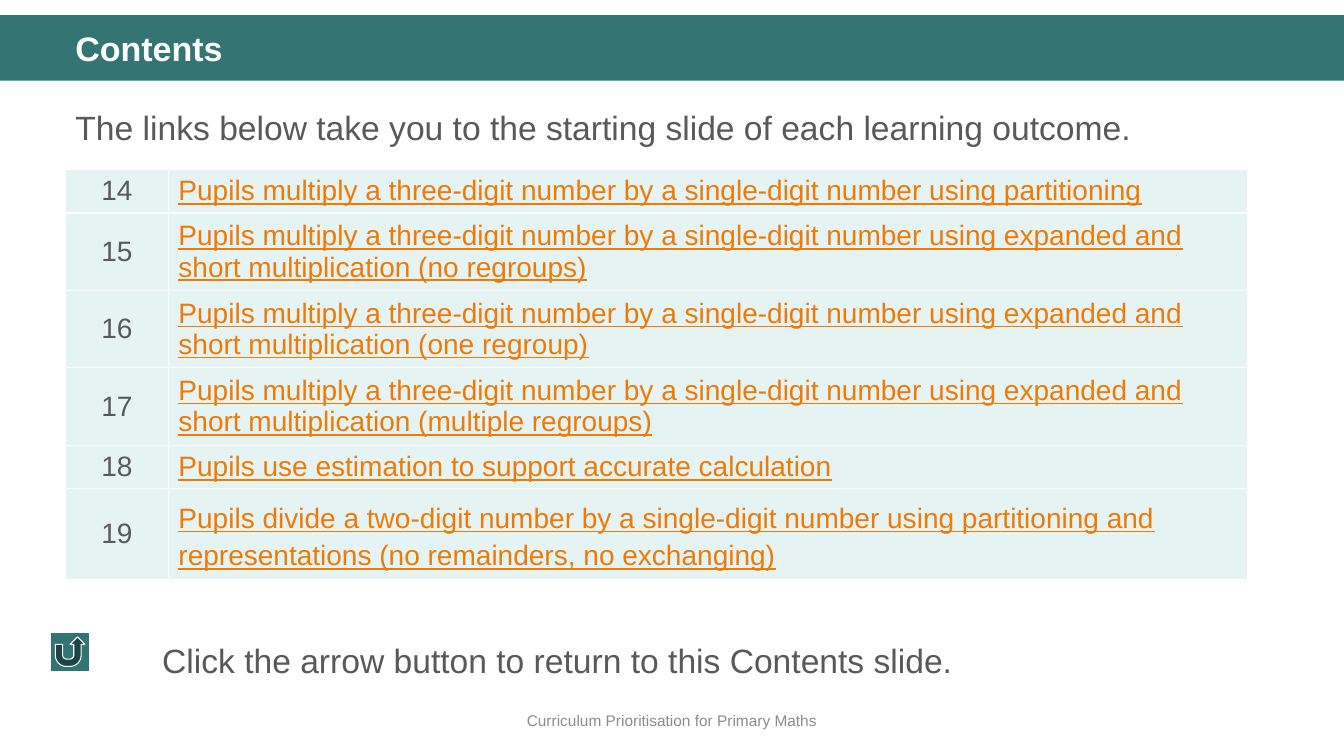
"""Build the contents slide of a primary maths curriculum deck."""
import pptx
import pptx.dml.color
import pptx.enum.shapes
import pptx.enum.text
import pptx.util

ALIGN = pptx.enum.text.PP_ALIGN
ANCHOR = pptx.enum.text.MSO_ANCHOR
SHAPE = pptx.enum.shapes.MSO_SHAPE
TEAL, BUTTON_TEAL, PALE_TEAL = "347574", "327473", "E5F3F2"
WHITE, GREY, LIGHT_GREY, ORANGE = "FFFFFF", "595959", "8C8C8C", "EE7B08"


def colour(hex_value):
    return pptx.dml.color.RGBColor.from_string(hex_value)


def write_text(frame, text, size=24, ink=GREY, bold=False, underline=False,
               align=ALIGN.LEFT, anchor=ANCHOR.TOP, spacing=1.0, before=0):
    frame.word_wrap = True
    frame.vertical_anchor = anchor
    paragraph = frame.paragraphs[0]
    paragraph.alignment = align
    paragraph.line_spacing = spacing
    paragraph.space_before = pptx.util.Pt(before)
    run = paragraph.add_run()
    run.text = text
    run.font.name = "Arial"
    run.font.size = pptx.util.Pt(size)
    run.font.bold = bold
    run.font.underline = underline
    run.font.color.rgb = colour(ink)


columns, rows = 1333, 750
unit = pptx.util.Inches(0.01)
margin = 65
text_width = columns - margin - 50

presentation = pptx.Presentation()
presentation.slide_width = columns * unit
presentation.slide_height = rows * unit
slide = presentation.slides.add_slide(presentation.slide_layouts[6])

shapes = [
    (SHAPE.RECTANGLE, (0, 15, columns, 65), TEAL, None),
    (SHAPE.ACTION_BUTTON_RETURN, (50, 627, 39, 39), BUTTON_TEAL, WHITE),
]
for preset, box, fill, line in shapes:
    shape = slide.shapes.add_shape(preset, *(length * unit for length in box))
    shape.shadow.inherit = False
    shape.fill.solid()
    shape.fill.fore_color.rgb = colour(fill)
    if line:
        shape.line.color.rgb = colour(line)
        shape.line.width = pptx.util.Pt(0.75)
    else:
        shape.line.fill.background()

texts = [
    ((margin, 27, text_width, 47), "Contents",
     dict(size=24.3, ink=WHITE, bold=True, spacing=0.9)),
    ((margin, 93, text_width, 60),
     "The links below take you to the starting slide of each learning outcome.",
     dict(spacing=1.2, before=10)),
    ((151, 630, 1132, 50),
     "Click the arrow button to return to this Contents slide.", {}),
    ((0, 695, columns, 40), "Curriculum Prioritisation for Primary Maths",
     dict(size=11, ink=LIGHT_GREY, align=ALIGN.CENTER, anchor=ANCHOR.MIDDLE)),
]
for box, text, text_format in texts:
    textbox = slide.shapes.add_textbox(*(length * unit for length in box))
    write_text(textbox.text_frame, text, **text_format)

multiply = "Pupils multiply a three-digit number by a single-digit number using "
short = multiply + "expanded and short multiplication "
outcomes = [
    (multiply + "partitioning", 41, 1.0),
    (short + "(no regroups)", 72, 1.0),
    (short + "(one regroup)", 72, 1.0),
    (short + "(multiple regroups)", 72, 1.0),
    ("Pupils use estimation to support accurate calculation", 41, 1.0),
    ("Pupils divide a two-digit number by a single-digit number using "
     "partitioning and representations (no remainders, no exchanging)", 84, 1.2),
]
column_widths = (102, 1070)
table_height = sum(height for _, height, _ in outcomes)
table = slide.shapes.add_table(
    len(outcomes), len(column_widths), margin * unit, 168 * unit,
    sum(column_widths) * unit, table_height * unit).table
table.horz_banding = False
for column, width in zip(table.columns, column_widths):
    column.width = width * unit

for index, (outcome, height, spacing) in enumerate(outcomes):
    table.rows[index].height = height * unit
    contents = [
        (str(14 + index), dict(align=ALIGN.CENTER)),
        (outcome, dict(ink=ORANGE, underline=True, spacing=spacing)),
    ]
    for cell, (text, text_format) in zip(table.rows[index].cells, contents):
        cell.fill.solid()
        cell.fill.fore_color.rgb = colour(PALE_TEAL)
        cell.vertical_anchor = ANCHOR.MIDDLE
        write_text(cell.text_frame, text, size=20, anchor=None, **text_format)

presentation.save("out.pptx")
